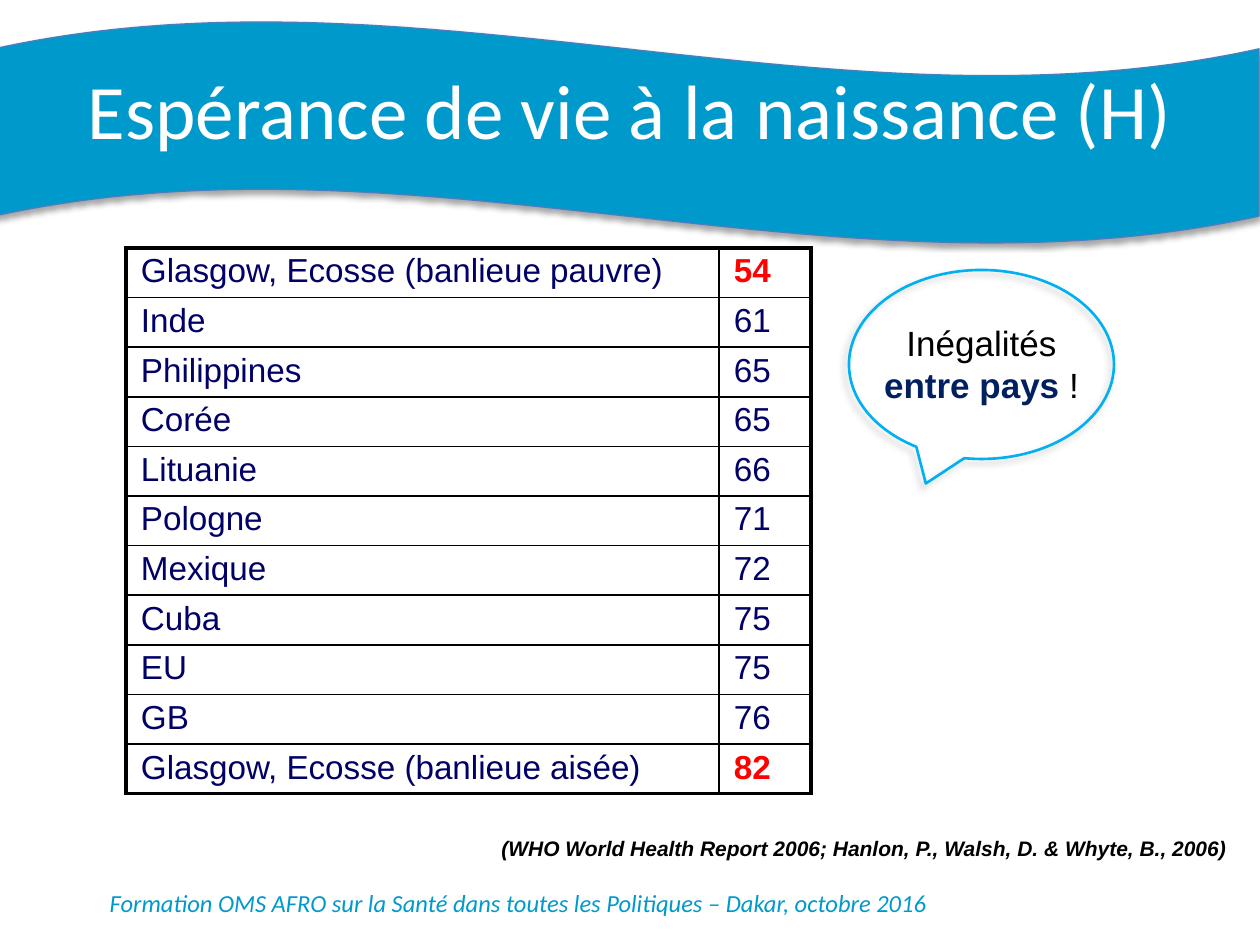
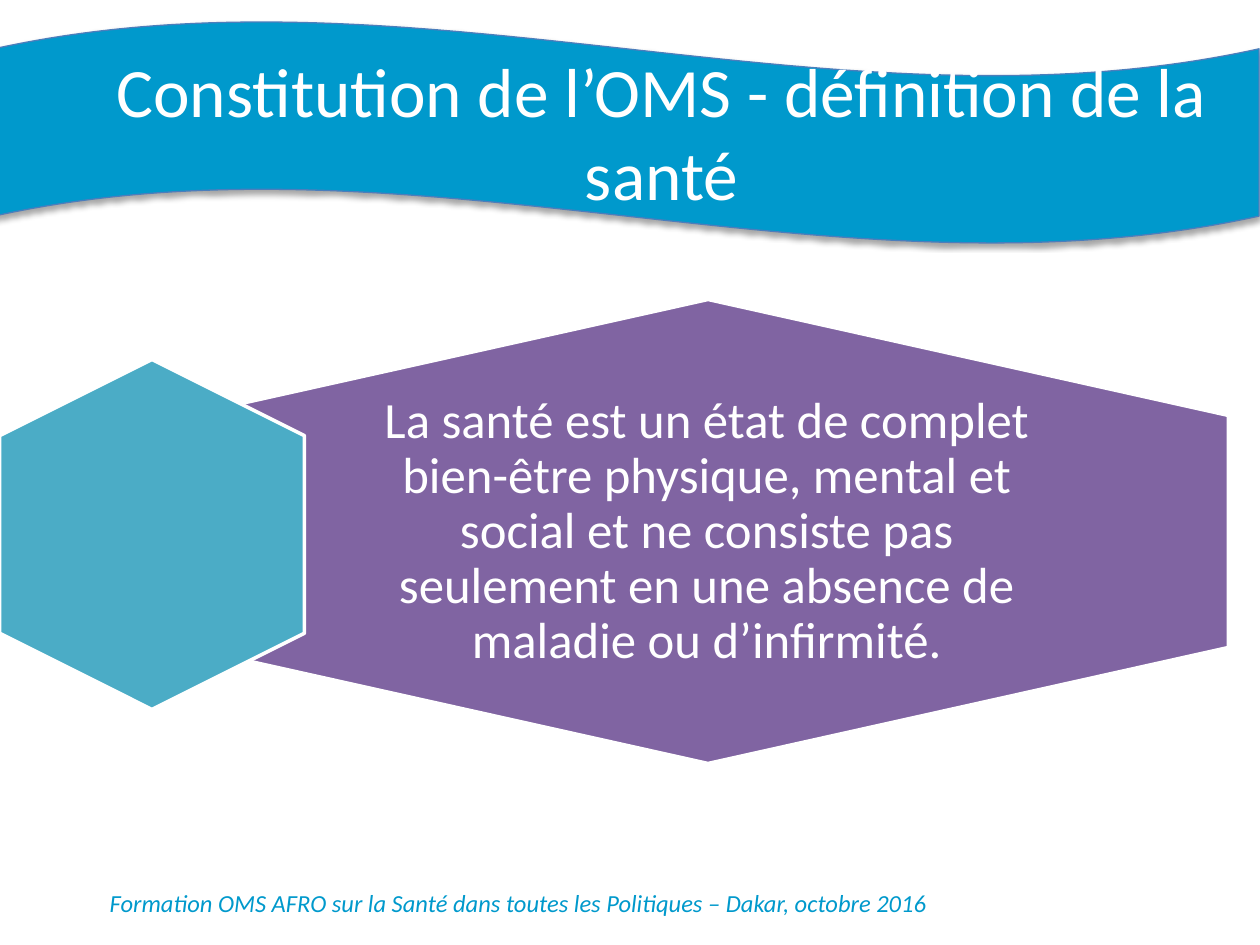
from lxml import etree
from pptx import Presentation
from pptx.dml.color import RGBColor
from pptx.enum.shapes import MSO_SHAPE as Shape
from pptx.enum.text import MSO_ANCHOR as Anchor, MSO_AUTO_SIZE as AutoSize, PP_ALIGN as Align
from pptx.oxml.ns import qn
from pptx.util import Pt

EMU_PER_PX = 914400 / 126
BLUE, WHITE, BLACK, NAVY, RED = "0099CC", "FFFFFF", "000000", "000066", "FF0000"

TITLE = {"name": "Calibri", "size": Pt(44), "color": WHITE}
LONG_TITLE = TITLE | {"size": Pt(39.6)}
FOOTER = {"name": "Calibri", "size": Pt(14), "italic": True, "color": BLUE}
CELL = {"name": "Arial", "size": Pt(19), "bold": False, "color": NAVY}
HIGHLIGHT = CELL | {"bold": True, "color": RED}
SOURCE = {"name": "Arial", "size": Pt(12), "bold": True, "italic": True, "color": BLACK}
CALLOUT = {"name": "Arial", "size": Pt(20), "color": BLACK}
CALLOUT_STRONG = CALLOUT | {"bold": True, "color": "002060"}
DEFINITION = {"name": "Calibri", "size": Pt(29), "color": WHITE}

LIFE_EXPECTANCY = [
    ("Glasgow, Ecosse (banlieue pauvre)", 54),
    ("Inde", 61),
    ("Philippines", 65),
    ("Corée", 65),
    ("Lituanie", 66),
    ("Pologne", 71),
    ("Mexique", 72),
    ("Cuba", 75),
    ("EU", 75),
    ("GB", 76),
    ("Glasgow, Ecosse (banlieue aisée)", 82),
]


def px(length):
    return round(length * EMU_PER_PX)


def box(*lengths):
    return [px(length) for length in lengths]


def rgb(colour):
    return RGBColor.from_string(colour)


def write_runs(paragraph, runs):
    for text, style in runs:
        run = paragraph.add_run()
        run.text = text
        for name, value in style.items():
            if name == "color":
                run.font.color.rgb = rgb(value)
            else:
                setattr(run.font, name, value)


def set_margins(target, horizontal, vertical):
    for side in ("left", "right"):
        setattr(target, f"margin_{side}", px(horizontal))
    for side in ("top", "bottom"):
        setattr(target, f"margin_{side}", px(vertical))


def add_text(slide, place, runs, alignment=Align.LEFT, anchor=Anchor.TOP):
    frame = slide.shapes.add_textbox(*box(*place)).text_frame
    frame.word_wrap = True
    frame.vertical_anchor = anchor
    paragraph = frame.paragraphs[0]
    paragraph.alignment = alignment
    write_runs(paragraph, runs)
    return frame


def add_shadow(shape, colour, opacity, blur, distance, angle):
    effects = shape._element.spPr.find(qn("a:effectLst"))
    shadow = etree.SubElement(
        effects, qn("a:outerShdw"), blurRad=str(Pt(blur)), dist=str(Pt(distance)),
        dir=str(angle * 60000), algn="ctr", rotWithShape="0")
    tint = etree.SubElement(shadow, qn("a:srgbClr"), val=colour)
    etree.SubElement(tint, qn("a:alpha"), val=str(opacity * 1000))


def add_figure(slide, kind, place, fill, line, width, adjustments, rotation=0):
    shape = slide.shapes.add_shape(kind, *box(*place))
    shape.shadow.inherit = False
    shape.rotation = rotation
    for index, value in enumerate(adjustments):
        shape.adjustments[index] = value
    if fill:
        shape.fill.solid()
        shape.fill.fore_color.rgb = rgb(fill)
    else:
        shape.fill.background()
    shape.line.color.rgb = rgb(line)
    shape.line.width = Pt(width)
    return shape


def move_to_layout(slide):
    tree = slide.slide_layout.shapes._spTree
    shared = [shape for shape in slide.shapes if not shape.is_placeholder]
    for shape_id, shape in enumerate(shared, start=20):
        shape._element.nvSpPr.cNvPr.set("id", str(shape_id))
        tree.append(shape._element)


def add_shared_design(slide):
    add_text(slide, (10, 882, 1017, 43),
             [("Formation OMS AFRO sur la Santé dans toutes les Politiques – Dakar, octobre 2016", FOOTER)],
             Align.CENTER)
    band = add_figure(slide, Shape.WAVE, (-6, 21, 1265, 223), BLUE, "4B7EBC", 0.75, [0.125, 0])
    add_shadow(band, BLACK, 35, 3.1, 1.8, 90)
    move_to_layout(slide)


def set_title(slide, place, text, style):
    title = slide.shapes.title
    title.left, title.top, title.width, title.height = box(*place)
    frame = title.text_frame
    frame.auto_size = AutoSize.NONE
    frame.word_wrap = True
    frame.vertical_anchor = Anchor.MIDDLE
    paragraph = frame.paragraphs[0]
    paragraph.alignment = Align.CENTER
    write_runs(paragraph, [(text, style)])


def set_borders(cell, widths):
    properties = cell._tc.get_or_add_tcPr()
    for side, width in zip("LRTB", widths):
        line = etree.SubElement(properties, qn(f"a:ln{side}"), w=str(Pt(width)))
        fill = etree.SubElement(line, qn("a:solidFill"))
        etree.SubElement(fill, qn("a:srgbClr"), val=BLACK)


def add_table(slide, place, rows, column_widths):
    frame = slide.shapes.add_table(len(rows), len(column_widths), *box(*place))
    table = frame.table
    table.first_row = table.horz_banding = False
    for column, width in zip(table.columns, column_widths):
        column.width = px(width)
    last_row, last_column = len(rows) - 1, len(column_widths) - 1
    for row_index, row in enumerate(rows):
        for column_index, value in enumerate(row):
            cell = table.cell(row_index, column_index)
            outer = (column_index == 0, column_index == last_column,
                     row_index == 0, row_index == last_row)
            set_borders(cell, [2.25 if edge else 1 for edge in outer])
            cell.fill.background()
            set_margins(cell, 15, 5)
            extreme = column_index == last_column and row_index in (0, last_row)
            write_runs(cell.text_frame.paragraphs[0],
                       [(str(value), HIGHLIGHT if extreme else CELL)])


def add_hexagon(slide, place, fill):
    return add_figure(slide, Shape.HEXAGON, place, fill, WHITE, 2, [0.25], 90)


def build_life_expectancy(slide):
    set_title(slide, (0, 24, 1260, 170), "Espérance de vie à la naissance (H)", TITLE)
    add_table(slide, (126, 248, 685, 546), LIFE_EXPECTANCY, (593, 92))
    add_text(slide, (489, 829, 771, 38),
             [("(WHO World Health Report 2006; Hanlon, P., Walsh, D. & Whyte, B., 2006)", SOURCE)])
    callout = add_figure(slide, Shape.OVAL_CALLOUT, (849, 270, 265, 189),
                         None, "00B0F0", 1.5, [-0.21, 0.63])
    add_shadow(callout, "808080", 40, 4, 3, 135)
    add_text(slide, (849, 315, 265, 97),
             [("Inégalités ", CALLOUT), ("entre pays ", CALLOUT_STRONG), ("!", CALLOUT)],
             Align.CENTER)


def build_definition(slide):
    set_title(slide, (63, 53, 1197, 157),
              "Constitution de l’OMS - définition de la santé", LONG_TITLE)
    add_hexagon(slide, (476, 11, 464, 1041), "8064A2")
    frame = add_text(slide, (360, 377, 694, 310),
                     [("La santé est un état de complet bien-être physique, mental et social "
                       "et ne consiste pas seulement en une absence de maladie ou d’infirmité.",
                       DEFINITION)],
                     Align.CENTER, Anchor.MIDDLE)
    set_margins(frame, 15, 15)
    frame.paragraphs[0].line_spacing = 0.9
    add_hexagon(slide, (-23, 382, 350, 305), "4BACC6")


def main():
    presentation = Presentation()
    presentation.slide_width, presentation.slide_height = box(1260, 945)
    layout = presentation.slide_layouts[5]
    first, second = [presentation.slides.add_slide(layout) for _ in range(2)]
    add_shared_design(first)
    build_life_expectancy(first)
    build_definition(second)
    presentation.save("out.pptx")


if __name__ == "__main__":
    main()
